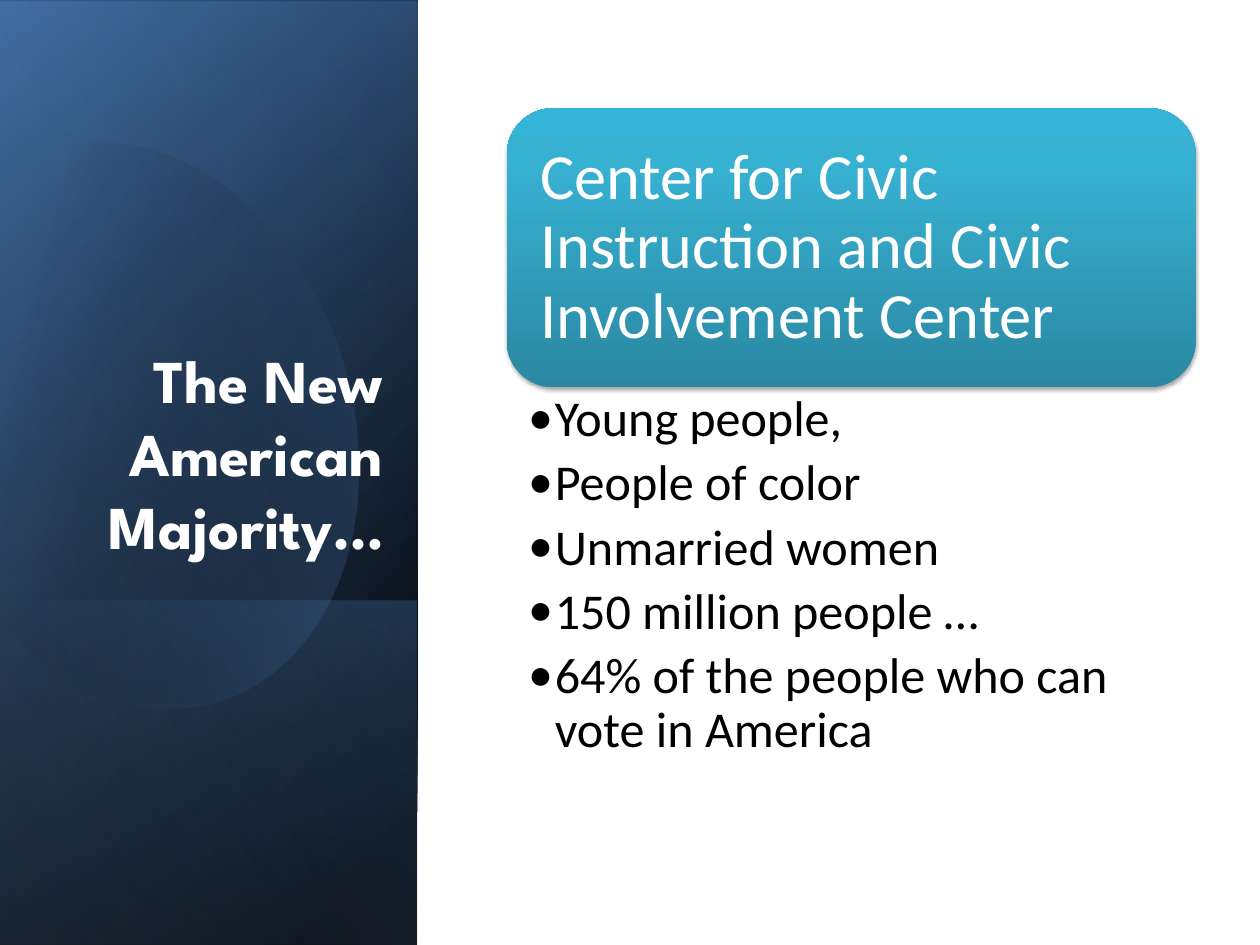
import math

from lxml import etree
from pptx import Presentation
from pptx.dml.color import RGBColor
from pptx.enum.shapes import MSO_SHAPE
from pptx.enum.text import MSO_ANCHOR, MSO_AUTO_SIZE, PP_ALIGN
from pptx.oxml import parse_xml
from pptx.oxml.ns import nsdecls, qn
from pptx.util import Inches, Pt

RECTANGLE = MSO_SHAPE.RECTANGLE
ROUNDED = MSO_SHAPE.ROUNDED_RECTANGLE
TOP, MIDDLE, BOTTOM = MSO_ANCHOR.TOP, MSO_ANCHOR.MIDDLE, MSO_ANCHOR.BOTTOM
LEFT, RIGHT = PP_ALIGN.LEFT, PP_ALIGN.RIGHT
NO_AUTOFIT = MSO_AUTO_SIZE.NONE

WHITE = RGBColor(0xFF, 0xFF, 0xFF)
BLACK = RGBColor(0x00, 0x00, 0x00)
NAVY = RGBColor(0x37, 0x60, 0x92)
BLUE = RGBColor(0x4F, 0x81, 0xBD)
PALE_BLUE = RGBColor(0x95, 0xB3, 0xD7)
DARK_TEAL = RGBColor(0x2A, 0x88, 0xA2)
TEAL = RGBColor(0x37, 0xB1, 0xD2)
LIGHT_TEAL = RGBColor(0x34, 0xB4, 0xD6)

TITLE = "The New American Majority…"
HEADING = "Center for Civic Instruction and Civic Involvement Center"
GROUPS = [
    "Young people,",
    "People of color",
    "Unmarried women",
    "150 million people …",
    "64% of the people who can vote in America",
]

FULL_PANEL = (-3.07, 3.07, 11, 4.86)
PANELS_BELOW = [
    (FULL_PANEL, [(8, BLACK, 100), (100, NAVY, 100)], 50),
    ((-3.07, 3.09, 11, 4.86), [(0, BLACK, 0), (99, BLUE, 46)], 30),
    ((0.42, 6.56, 4.01, 4.86), [(2, BLUE, 29), (100, BLACK, 30)], 130),
]
PANEL_ABOVE = (FULL_PANEL, [(0, BLACK, 0), (99, PALE_BLUE, 11)], 120)

OVAL_CENTER = (1.75, 4.91)
OVAL_ROTATION = 343.9
OVAL_START = (1.41, 1.67)
OVAL_RIGHT = [
    [(2.51, 1.8), (3.58, 2.81), (4, 4.26)],
    [(4.51, 6.04), (3.84, 7.79), (2.51, 8.17)],
    [(1.68, 8.41), (0.78, 8.06), (0.1, 7.33)],
]
OVAL_LEFT_EDGE = [(-0.05, 7.16), (-0.37, 2.44), (-0.21, 2.26)]
OVAL_TOP = [
    [(0.03, 2.01), (0.32, 1.83), (0.65, 1.73)],
    [(0.9, 1.66), (1.16, 1.64), OVAL_START],
]
OVAL_STOPS = [(29, BLACK, 0), (100, BLUE, 43)]
CURVE_STEPS = 16

TITLE_BOX = (0.71, 2.7, 3.75, 3.84)
CARD_BOX = (5.9, 1.26, 8.02, 3.25)
LIST_BOX = (5.9, 4.51, 8.02, 5.38)
CARD_STOPS = [(0, DARK_TEAL, 100), (80, TEAL, 100), (100, LIGHT_TEAL, 100)]
BULLET_INDENT = 0.31


def inches(values):
    return [Inches(value) for value in values]


def set_gradient(shape, stops, angle):
    shape.shadow.inherit = False
    shape.line.fill.background()
    shape.fill.background()
    stop_xml = "".join(
        f'<a:gs pos="{position * 1000}"><a:srgbClr val="{color}">'
        f'<a:alpha val="{alpha * 1000}"/></a:srgbClr></a:gs>'
        for position, color, alpha in stops
    )
    gradient = parse_xml(
        f'<a:gradFill {nsdecls("a")} rotWithShape="1"><a:gsLst>{stop_xml}</a:gsLst>'
        f'<a:lin ang="{angle * 60000}" scaled="0"/></a:gradFill>'
    )
    properties = shape.element.spPr
    properties.replace(properties.find(qn("a:noFill")), gradient)


def add_panel(shapes, box, stops, angle):
    panel = shapes.add_shape(RECTANGLE, *inches(box))
    panel.rotation = 90
    panel.element.spPr.find(qn("a:xfrm")).set("flipH", "1")
    set_gradient(panel, stops, angle)


def curve_points(start, curves):
    points = []
    for first, second, end in curves:
        for step in range(1, CURVE_STEPS + 1):
            t = step / CURVE_STEPS
            u = 1 - t
            weights = (u**3, 3 * u * u * t, 3 * u * t * t, t**3)
            controls = (start, first, second, end)
            points.append(tuple(
                sum(w * p[axis] for w, p in zip(weights, controls)) for axis in (0, 1)
            ))
        start = end
    return points


def unrotate(point):
    angle = math.radians(-OVAL_ROTATION)
    dx, dy = point[0] - OVAL_CENTER[0], point[1] - OVAL_CENTER[1]
    return (
        OVAL_CENTER[0] + dx * math.cos(angle) - dy * math.sin(angle),
        OVAL_CENTER[1] + dx * math.sin(angle) + dy * math.cos(angle),
    )


def add_oval(shapes):
    outline = [OVAL_START] + curve_points(OVAL_START, OVAL_RIGHT) + OVAL_LEFT_EDGE
    outline += curve_points(OVAL_LEFT_EDGE[-1], OVAL_TOP)
    points = [inches(unrotate(point)) for point in outline]
    builder = shapes.build_freeform(*points[0])
    builder.add_line_segments(points[1:], close=True)
    oval = builder.convert_to_shape()
    oval.rotation = OVAL_ROTATION
    set_gradient(oval, OVAL_STOPS, 30)


def set_frame(frame, anchor, margins):
    frame.word_wrap = True
    frame.auto_size = NO_AUTOFIT
    frame.vertical_anchor = anchor
    (frame.margin_left, frame.margin_top,
     frame.margin_right, frame.margin_bottom) = inches(margins)


def write(paragraph, text, font, size, color, align=LEFT, bold=False):
    paragraph.alignment = align
    run = paragraph.add_run()
    run.text = text
    run.font.name = font
    run.font.size = Pt(size)
    run.font.bold = bold
    run.font.color.rgb = color


def add_card(shapes):
    card = shapes.add_shape(ROUNDED, *inches(CARD_BOX))
    set_gradient(card, CARD_STOPS, 270)
    card.element.spPr.find(qn("a:effectLst")).append(parse_xml(
        f'<a:outerShdw {nsdecls("a")} blurRad="{Pt(3.1)}" dist="{Pt(1.8)}" '
        'dir="5400000" rotWithShape="0"><a:srgbClr val="000000">'
        '<a:alpha val="35000"/></a:srgbClr></a:outerShdw>'
    ))
    set_frame(card.text_frame, MIDDLE, (0.23, 0.23, 0.23, 0.23))
    heading = card.text_frame.paragraphs[0]
    heading.line_spacing = 0.9
    write(heading, HEADING, "Calibri", 54, WHITE)


def add_group_list(shapes):
    frame = shapes.add_textbox(*inches(LIST_BOX)).text_frame
    set_frame(frame, TOP, (0.25, 0.07, 0.42, 0.07))
    for index, text in enumerate(GROUPS):
        item = frame.add_paragraph() if index else frame.paragraphs[0]
        item.level = 1
        item.line_spacing = 0.9
        item.space_after = Pt(8.4)
        write(item, text, "Calibri", 42, BLACK)
        properties = item._p.get_or_add_pPr()
        properties.set("marL", str(Inches(BULLET_INDENT)))
        properties.set("indent", str(Inches(-BULLET_INDENT)))
        etree.SubElement(properties, qn("a:buFont")).set("typeface", "Calibri")
        etree.SubElement(properties, qn("a:buChar")).set("char", "•")


def main():
    deck = Presentation()
    deck.slide_width, deck.slide_height = Inches(14.67), Inches(11)
    slide = deck.slides.add_slide(deck.slide_layouts[5])
    shapes = slide.shapes
    title = shapes.title

    for panel in PANELS_BELOW:
        add_panel(shapes, *panel)
    add_oval(shapes)
    add_panel(shapes, *PANEL_ABOVE)

    shapes.element.append(title.element)
    title.left, title.top, title.width, title.height = inches(TITLE_BOX)
    set_frame(title.text_frame, BOTTOM, (0, 0, 0, 0))
    write(title.text_frame.paragraphs[0], TITLE, "League Spartan", 51, WHITE, RIGHT, True)

    message = shapes.add_group_shape().shapes
    add_card(message)
    add_group_list(message)
    deck.save("out.pptx")


if __name__ == "__main__":
    main()
